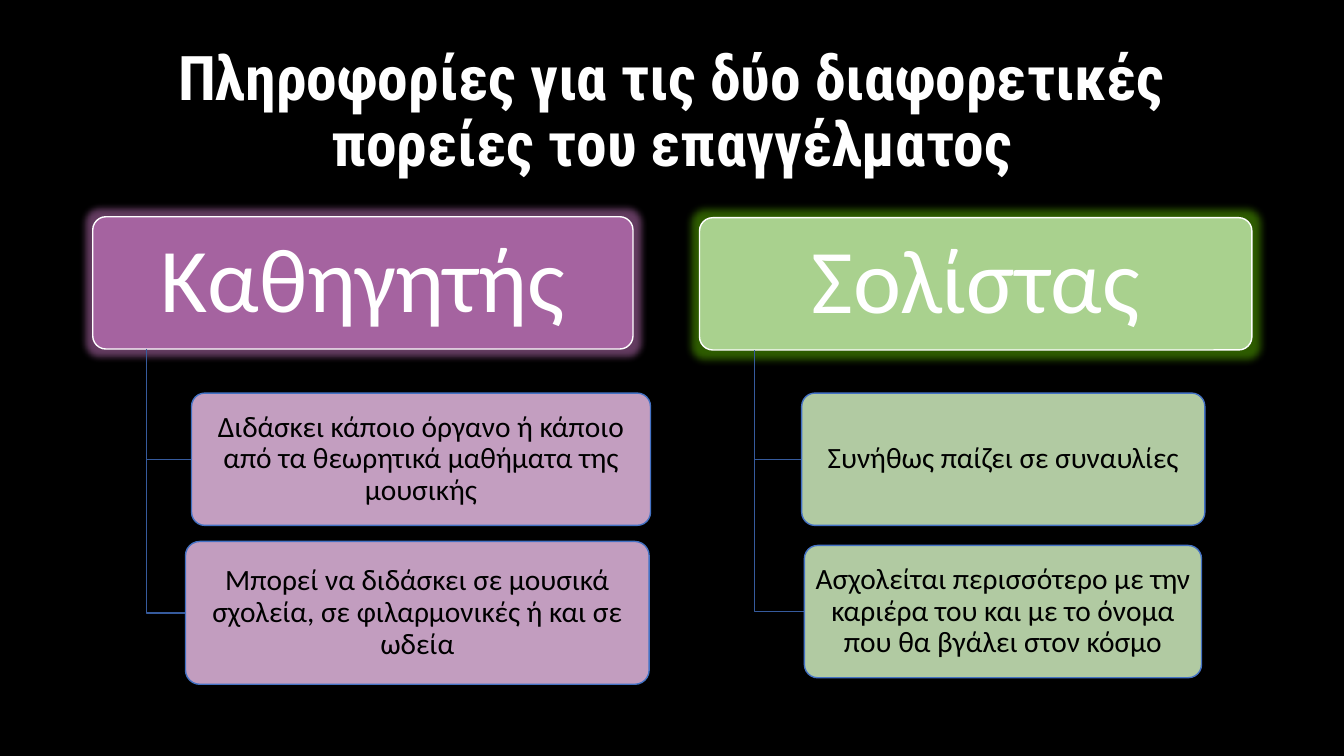
from dataclasses import dataclass

from lxml.etree import SubElement
from pptx import Presentation
from pptx.dml.color import RGBColor
from pptx.enum.shapes import MSO_SHAPE as Preset
from pptx.enum.text import MSO_ANCHOR as Anchor, PP_ALIGN as Align
from pptx.oxml.ns import qn
from pptx.util import Inches, Pt


@dataclass(frozen=True)
class Theme:
    background: str = "000000"
    light: str = "FFFFFF"
    dark: str = "000000"
    outline: str = "4472C4"
    trunk: str = "365B9D"
    heading_font: str = "Roboto Condensed"
    body_font: str = "Calibri"
    title_size: int = 44
    career_size: int = 65
    fact_size: int = 21
    line_width: int = 1
    line_spacing: float = 0.9
    corner: float = 0.1


@dataclass(frozen=True)
class Box:
    """Position and size in columns and rows of a 100 x 100 grid."""
    left: float
    top: float
    width: float
    height: float

    def within(self, parent):
        return Box(parent.left + self.left, parent.top + self.top, self.width, self.height)

    def emu(self):
        return (round(self.left * COLUMN), round(self.top * ROW),
                round(self.width * COLUMN), round(self.height * ROW))


@dataclass(frozen=True)
class Career:
    name: str
    fill: str
    glow: tuple  # colour, opacity in percent, radius in points
    box: Box
    facts: tuple  # wording, fill, opacity in percent, box relative to the career


THEME = Theme()
SLIDE_WIDTH, SLIDE_HEIGHT = Inches(13.33), Inches(7.5)
COLUMN, ROW = SLIDE_WIDTH / 100, SLIDE_HEIGHT / 100
TRUNK_SHARE = 0.1  # of the career's width
TITLE = "Πληροφορίες για τις δύο διαφορετικές πορείες του επαγγέλματος"
CAREERS = (
    Career("Καθηγητής", "A563A0", ("A563A0", 60, 10), Box(6.9, 28.67, 40.2, 17.5), (
        ("Διδάσκει κάποιο όργανο ή κάποιο από τα θεωρητικά μαθήματα της μουσικής",
         "C39EC0", 100, Box(7.35, 23.33, 34.15, 17.5)),
        ("Μπορεί να διδάσκει σε μουσικά σχολεία, σε φιλαρμονικές ή και σε ωδεία",
         "C9A3C6", 97, Box(6.9, 42.95, 34.5, 18.9)),
    )),
    Career("Σολίστας", "A9D18E", ("336600", 90, 11), Box(52.05, 28.8, 41.1, 17.5), (
        ("Συνήθως παίζει σε συναυλίες", "C5E0B4", 90, Box(7.6, 23.2, 30, 17.5)),
        ("Ασχολείται περισσότερο με την καριέρα του και με το όνομα που θα βγάλει στον κόσμο",
         "C5E0B4", 90, Box(7.8, 43.35, 29.55, 17.5)),
    )),
)


def rgb(value):
    return RGBColor.from_string(value)


def set_opacity(colour, percent):
    SubElement(colour, qn("a:alpha")).set("val", str(percent * 1000))


def write(frame, wording, font, size, colour, bold=False):
    frame.word_wrap = True
    frame.vertical_anchor = Anchor.MIDDLE
    paragraph = frame.paragraphs[0]
    paragraph.alignment = Align.CENTER
    paragraph.line_spacing = THEME.line_spacing
    run = paragraph.add_run()
    run.text = wording
    run.font.name, run.font.size, run.font.bold = font, Pt(size), bold
    run.font.color.rgb = rgb(colour)


def add_card(slide, box, fill, opacity, outline, wording, size, colour, insets):
    card = slide.shapes.add_shape(Preset.ROUNDED_RECTANGLE, *box.emu())
    card.adjustments[0] = THEME.corner
    card.shadow.inherit = False
    card.fill.solid()
    card.fill.fore_color.rgb = rgb(fill)
    if opacity < 100:
        set_opacity(card.element.spPr.find(qn("a:solidFill"))[0], opacity)
    card.line.color.rgb = rgb(outline)
    card.line.width = Pt(THEME.line_width)
    frame = card.text_frame
    frame.margin_left = frame.margin_right = Inches(insets[0])
    frame.margin_top = frame.margin_bottom = Inches(insets[1])
    write(frame, wording, THEME.body_font, size, colour)
    return card


def add_glow(card, colour, opacity, radius):
    effects = card.element.spPr.find(qn("a:effectLst"))
    glow = SubElement(effects, qn("a:glow"), rad=str(Pt(radius)))
    set_opacity(SubElement(glow, qn("a:srgbClr"), val=colour), opacity)


def add_branch(slide, career, fact):
    """Elbow from the bottom of the career to the left side of the fact."""
    left, top, width, height = career.emu()
    fact_left, fact_top, _, fact_height = fact.emu()
    trunk_x, start_y = round(left + width * TRUNK_SHARE), top + height
    middle_y = fact_top + fact_height // 2
    builder = slide.shapes.build_freeform(trunk_x, start_y)
    builder.add_line_segments([(trunk_x, middle_y), (fact_left, middle_y)], close=False)
    branch = builder.convert_to_shape()
    branch.shadow.inherit = False
    branch.fill.background()
    branch.line.color.rgb = rgb(THEME.trunk)
    branch.line.width = Pt(THEME.line_width)


def add_title(slide, box):
    title = slide.shapes.title
    title.left, title.top, title.width, title.height = box.emu()
    write(title.text_frame, TITLE, THEME.heading_font, THEME.title_size, THEME.light, bold=True)


def add_career(slide, career):
    heading = add_card(slide, career.box, career.fill, 100, THEME.light,
                       career.name, THEME.career_size, THEME.light, (0.14, 0.09))
    add_glow(heading, *career.glow)
    for wording, fill, opacity, offset in career.facts:
        box = offset.within(career.box)
        add_branch(slide, career.box, box)
        add_card(slide, box, fill, opacity, THEME.outline,
                 wording, THEME.fact_size, THEME.dark, (0.04, 0.03))


def main():
    deck = Presentation()
    deck.slide_width, deck.slide_height = SLIDE_WIDTH, SLIDE_HEIGHT
    slide = deck.slides.add_slide(deck.slide_layouts[5])
    slide.background.fill.solid()
    slide.background.fill.fore_color.rgb = rgb(THEME.background)
    add_title(slide, Box(6.9, 5.33, 86.25, 19.33))
    for career in CAREERS:
        add_career(slide, career)
    deck.save("out.pptx")


if __name__ == "__main__":
    main()
